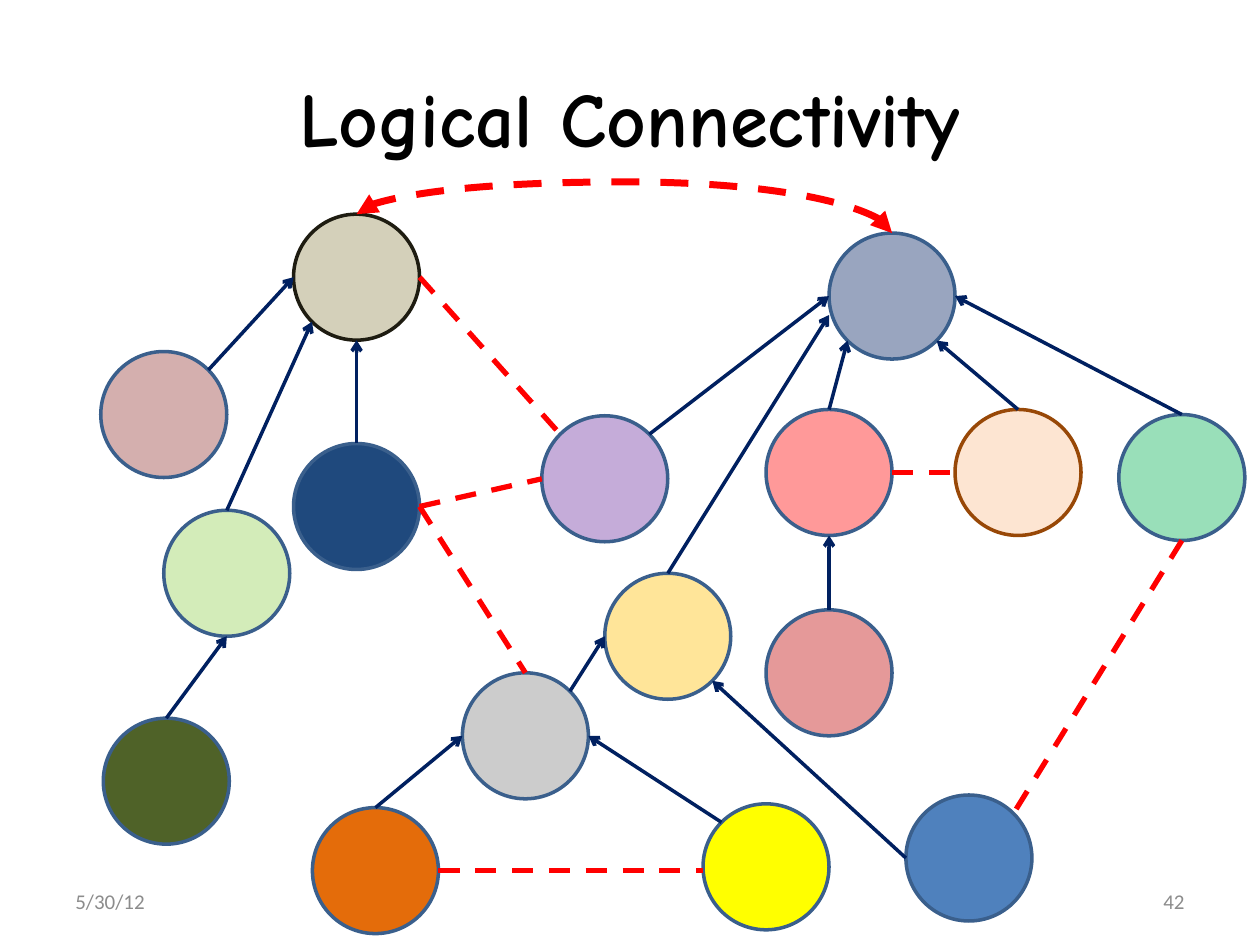
"""Build the Logical Connectivity slide: two node trees with dashed cross links."""
from collections import namedtuple
from math import cos, radians, sin

from lxml import etree
from pptx import Presentation
from pptx.dml.color import RGBColor
from pptx.enum.dml import MSO_LINE
from pptx.enum.shapes import MSO_CONNECTOR, MSO_SHAPE
from pptx.enum.text import MSO_ANCHOR, PP_ALIGN
from pptx.oxml.ns import qn
from pptx.util import Pt

PX = 9144
DIAMETER = 100
DASH = MSO_LINE.DASH
STRAIGHT, CURVE = MSO_CONNECTOR.STRAIGHT, MSO_CONNECTOR.CURVE
OVAL = MSO_SHAPE.OVAL
LEFT, CENTER, RIGHT = PP_ALIGN.LEFT, PP_ALIGN.CENTER, PP_ALIGN.RIGHT
MIDDLE = MSO_ANCHOR.MIDDLE
TOP, TOP_LEFT, WEST, BOTTOM_LEFT, BOTTOM, BOTTOM_RIGHT, EAST, TOP_RIGHT = range(8)

Box = namedtuple("Box", "left top width height")
Node = namedtuple("Node", "left top fill opacity outline", defaults=(40, "outline"))

COLORS = {
    "title": "000000", "footer": "8C8C8C", "outline": "3A5F8C",
    "tree": "002060", "cross": "FF0000", "tan_outline": "1E1C11",
    "peach_outline": "984807", "slate": "002060", "tan": "948A54",
    "peach": "FAC090", "coral": "FF0000", "purple": "7030A0",
    "mint": "00B050", "rose": "C00000", "gold": "FFC000", "gray": "808080",
    "yellow": "FFFF00", "orange": "E46C0A", "mauve": "953735",
    "navy": "1F497D", "blue": "4F81BD", "lime": "92D050", "olive": "4F6228",
}

NODES = {
    "slate": Node(658, 185, "slate"),
    "tan": Node(233, 170, "tan", 40, "tan_outline"),
    "peach": Node(758, 325, "peach", 40, "peach_outline"),
    "coral": Node(608, 325, "coral"),
    "purple": Node(430, 330, "purple"),
    "mint": Node(888, 329, "mint"),
    "rose": Node(608, 484, "rose"),
    "gold": Node(480, 455, "gold"),
    "gray": Node(367, 534, "gray"),
    "yellow": Node(558, 638, "yellow", 100),
    "orange": Node(248, 641, "orange", 100),
    "mauve": Node(80, 279, "mauve"),
    "navy": Node(233, 352, "navy", 100),
    "blue": Node(719, 631, "blue", 100),
    "lime": Node(130, 405, "lime"),
    "olive": Node(82, 570, "olive", 100),
}

TREE_LINKS = [
    (("purple", TOP_RIGHT), ("slate", WEST)),
    (("coral", TOP), ("slate", BOTTOM_LEFT)),
    (("peach", TOP), ("slate", BOTTOM_RIGHT)),
    (("mint", TOP), ("slate", EAST)),
    (("rose", TOP), ("coral", BOTTOM)),
    (("gold", TOP), (658, 250)),
    (("gray", TOP_RIGHT), ("gold", WEST)),
    (("yellow", TOP_LEFT), ("gray", EAST)),
    (("mauve", TOP_RIGHT), ("tan", WEST)),
    (("navy", TOP), ("tan", BOTTOM)),
    (("blue", WEST), ("gold", BOTTOM_RIGHT)),
    (("lime", TOP), ("tan", BOTTOM_LEFT)),
    (("olive", TOP), ("lime", BOTTOM)),
    (("orange", TOP), ("gray", WEST)),
]

CROSS_LINKS = [
    (("navy", EAST), ("purple", WEST)),
    (("navy", EAST), ("gray", TOP)),
    (("coral", EAST), ("peach", WEST)),
    (("tan", EAST), ("purple", TOP_LEFT)),
    (("mint", BOTTOM), ("blue", TOP_RIGHT)),
    (("orange", EAST), (558, 691)),
]


def emu(*lengths):
    """Turn px lengths into whole EMU."""
    return [round(length * PX) for length in lengths]


def color(name):
    """Look up a palette colour."""
    return RGBColor.from_string(COLORS[name])


def write_text(shape, text, size, font, ink, align, bold=False):
    """Write one formatted run, centred vertically, into a shape."""
    frame = shape.text_frame
    frame.word_wrap = True
    frame.vertical_anchor = MIDDLE
    para = frame.paragraphs[0]
    para.alignment = align
    span = para.add_run()
    span.text = text
    span.font.size = Pt(size)
    span.font.name = font
    span.font.bold = bold
    span.font.color.rgb = color(ink)


def add_title(page, box):
    """Move the title placeholder into the box and fill it."""
    title = page.shapes.title
    title.left, title.top, title.width, title.height = emu(*box)
    write_text(title, "Logical Connectivity", 44, "Comic Neue", "title", CENTER, True)


def add_footer(page, box):
    """Put the date and the page number at the two ends of the box."""
    width = 233
    for text, offset, align in (("5/30/12", 0, LEFT), ("42", box.width - width, RIGHT)):
        label = page.shapes.add_textbox(*emu(box.left + offset, box.top, width, box.height))
        write_text(label, text, 12, "Calibri", "footer", align)


def add_node(page, box, node):
    """Draw one circle of the network."""
    circle = page.shapes.add_shape(
        OVAL, *emu(box.left + node.left, box.top + node.top, DIAMETER, DIAMETER))
    circle.shadow.inherit = False
    circle.fill.solid()
    circle.fill.fore_color.rgb = color(node.fill)
    circle.line.color.rgb = color(node.outline)
    circle.line.width = Pt(2)
    if node.opacity < 100:
        tint = circle._element.spPr.find(qn("a:solidFill"))[0]
        etree.SubElement(tint, qn("a:alpha"), val=str(node.opacity * 1000))
    return circle


def locate(end):
    """Give the point of a (node, site) pair, or the bare point itself."""
    if end[0] not in NODES:
        return end
    node, turn, radius = NODES[end[0]], radians(45 * end[1]), DIAMETER / 2
    return (node.left + radius * (1 - sin(turn)), node.top + radius * (1 - cos(turn)))


def style_link(link, ink, weight, dashed=False, heads=()):
    """Set the stroke and the arrowheads of a connector without shadow."""
    link.line.color.rgb = color(ink)
    link.line.width = Pt(weight)
    if dashed:
        link.line.dash_style = DASH
    stroke = link.line._get_or_add_ln()
    for tag, kind in heads:
        etree.SubElement(stroke, qn(tag), type=kind)
    etree.SubElement(link._element.spPr, qn("a:effectLst"))


def add_link(page, box, circles, start, finish):
    """Draw a straight link and join it to the circles' connection sites."""
    points = [(box.left + x, box.top + y) for x, y in map(locate, (start, finish))]
    link = page.shapes.add_connector(STRAIGHT, *emu(*points[0], *points[1]))
    joints = link._element.nvCxnSpPr.cNvCxnSpPr
    for end, join in ((start, joints.get_or_add_stCxn), (finish, joints.get_or_add_endCxn)):
        if end[0] in circles:
            joint = join()
            joint.id, joint.idx = circles[end[0]].shape_id, end[1]
    return link


def add_root_arc(page, box):
    """Draw the two-headed arc over the two root circles."""
    (x1, y1), (x2, y2) = locate(("slate", TOP)), locate(("tan", TOP))
    middle_x, middle_y = box.left + (x1 + x2) / 2, box.top + (y1 + y2) / 2
    half_rise, half_run = (y1 - y2) / 2, (x1 - x2) / 2
    arc = page.shapes.add_connector(
        CURVE, *emu(middle_x - half_rise, middle_y + half_run,
                    middle_x + half_rise, middle_y - half_run))
    properties = arc._element.spPr
    properties.find(qn("a:xfrm")).set("rot", "16200000")
    guides = properties.find(qn("a:prstGeom")).find(qn("a:avLst"))
    etree.SubElement(guides, qn("a:gd"), name="adj1", fmla="val 270700")
    style_link(arc, "cross", 4, True,
               (("a:headEnd", "triangle"), ("a:tailEnd", "triangle")))


def add_network(page, box):
    """Draw all circles, tree arrows and dashed cross links."""
    circles = {name: add_node(page, box, node) for name, node in NODES.items()}
    add_root_arc(page, box)
    for ends in TREE_LINKS:
        style_link(add_link(page, box, circles, *ends), "tree", 2,
                   heads=(("a:tailEnd", "arrow"),))
    for ends in CROSS_LINKS:
        style_link(add_link(page, box, circles, *ends), "cross", 3, True)


def main():
    """Build and save the deck."""
    deck = Presentation()
    deck.slide_width, deck.slide_height = emu(1000, 750)
    page = deck.slides.add_slide(deck.slide_layouts[5])
    add_title(page, Box(50, 30, 900, 125))
    add_network(page, Box(0, 0, 1000, 750))
    add_footer(page, Box(50, 695, 900, 40))
    deck.save("out.pptx")


if __name__ == "__main__":
    main()
